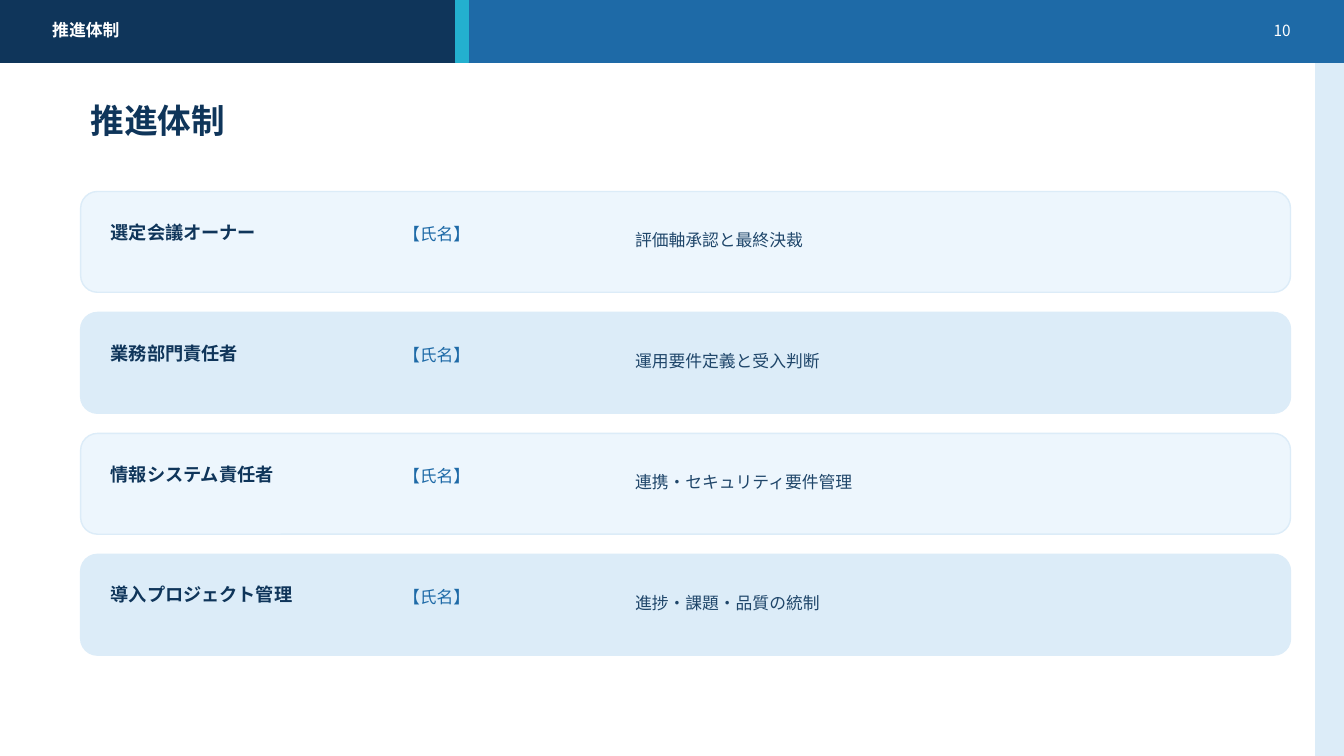
import dataclasses

import lxml.etree
import pptx
import pptx.dml.color
import pptx.enum.shapes
import pptx.enum.text
import pptx.oxml.ns
import pptx.util

PX = 9144
SHAPES = pptx.enum.shapes.MSO_SHAPE
ALIGN = pptx.enum.text.PP_ALIGN


@dataclasses.dataclass(frozen=True)
class Theme:
    """Colours, font and type sizes of the slide."""
    font: str = "Noto Sans CJK JP"
    navy: str = "0F355A"
    blue: str = "1E6AA7"
    cyan: str = "23B0CF"
    pale: str = "DCECF8"
    paler: str = "EDF6FD"
    body: str = "1F466A"
    white: str = "FFFFFF"
    title_size: int = 24
    role_size: int = 13
    body_size: int = 12
    page_size: int = 11


THEME = Theme()
ROLES = [
    ("選定会議オーナー", "【氏名】", "評価軸承認と最終決裁"),
    ("業務部門責任者", "【氏名】", "運用要件定義と受入判断"),
    ("情報システム責任者", "【氏名】", "連携・セキュリティ要件管理"),
    ("導入プロジェクト管理", "【氏名】", "進捗・課題・品質の統制"),
]


def emu(box):
    """Turn a box in px into EMU lengths."""
    return [pptx.util.Emu(length * PX) for length in box]


def add_panel(slide, box, fill, line=None, kind=SHAPES.RECTANGLE):
    """Add a filled shape with a thin outline."""
    shape = slide.shapes.add_shape(kind, *emu(box))
    shape.shadow.inherit = False
    shape.fill.solid()
    shape.fill.fore_color.rgb = pptx.dml.color.RGBColor.from_string(fill)
    shape.line.color.rgb = pptx.dml.color.RGBColor.from_string(line or fill)
    shape.line.width = pptx.util.Pt(1)


def add_text(slide, box, text, size, color, bold=False, align=ALIGN.LEFT):
    """Add one vertically centred line of text."""
    frame = slide.shapes.add_textbox(*emu(box)).text_frame
    frame.word_wrap = True
    frame.vertical_anchor = pptx.enum.text.MSO_ANCHOR.MIDDLE
    paragraph = frame.paragraphs[0]
    paragraph.text = text
    paragraph.alignment = align
    paragraph.font.size = pptx.util.Pt(size)
    paragraph.font.bold = bold
    paragraph.font.color.rgb = pptx.dml.color.RGBColor.from_string(color)
    paragraph.font.name = THEME.font
    properties = paragraph._p.pPr.find(pptx.oxml.ns.qn("a:defRPr"))
    lxml.etree.SubElement(properties, pptx.oxml.ns.qn("a:ea"), typeface=THEME.font)


def add_header(slide, box, section, page):
    """Draw the top band with section name and page number."""
    left, top, width, height = box
    add_panel(slide, box, THEME.blue)
    add_panel(slide, (left, top, 460, height), THEME.navy)
    add_panel(slide, (left + 452, top, 12, height), THEME.cyan)
    add_text(slide, (left + 42, top + 17, 880, 26), section,
             THEME.body_size, THEME.white, bold=True)
    add_text(slide, (left + width - 118, top + 17, 75, 26), page,
             THEME.page_size, THEME.white, align=ALIGN.RIGHT)


def add_role_card(slide, box, role, person, duty, fill):
    """Draw one card with a role, its holder and its duty."""
    left, top = box[:2]
    add_panel(slide, box, fill, THEME.pale, SHAPES.ROUNDED_RECTANGLE)
    add_text(slide, (left + 20, top + 28, 270, 24), role,
             THEME.role_size, THEME.navy, bold=True)
    add_text(slide, (left + 310, top + 30, 210, 24), person,
             THEME.body_size, THEME.blue)
    add_text(slide, (left + 540, top + 25, 620, 45), duty,
             THEME.body_size, THEME.body)


def add_role_list(slide, box, roles, gap):
    """Stack equal role cards in alternating fills."""
    left, top, width, height = box
    card_height = (height - gap * (len(roles) - 1)) // len(roles)
    for index, role in enumerate(roles):
        card = (left, top + index * (card_height + gap), width, card_height)
        add_role_card(slide, card, *role, (THEME.paler, THEME.pale)[index % 2])


def add_organisation_slide(presentation, box):
    """Build the project organisation slide."""
    left, top, width, height = box
    slide = presentation.slides.add_slide(presentation.slide_layouts[6])
    add_panel(slide, (left + width - 28, top + 55, 28, height - 55), THEME.pale)
    add_header(slide, (left, top, width, 62), "推進体制", "10")
    add_text(slide, (left + 80, top + 95, 1140, 48), "推進体制",
             THEME.title_size, THEME.navy, bold=True)
    add_role_list(slide, (left + 80, top + 190, 1200, 460), ROLES, 20)


def main():
    """Create and save the presentation."""
    presentation = pptx.Presentation()
    box = (0, 0, 1333, 750)
    presentation.slide_width, presentation.slide_height = emu(box)[2:]
    add_organisation_slide(presentation, box)
    presentation.save("out.pptx")


if __name__ == "__main__":
    main()
